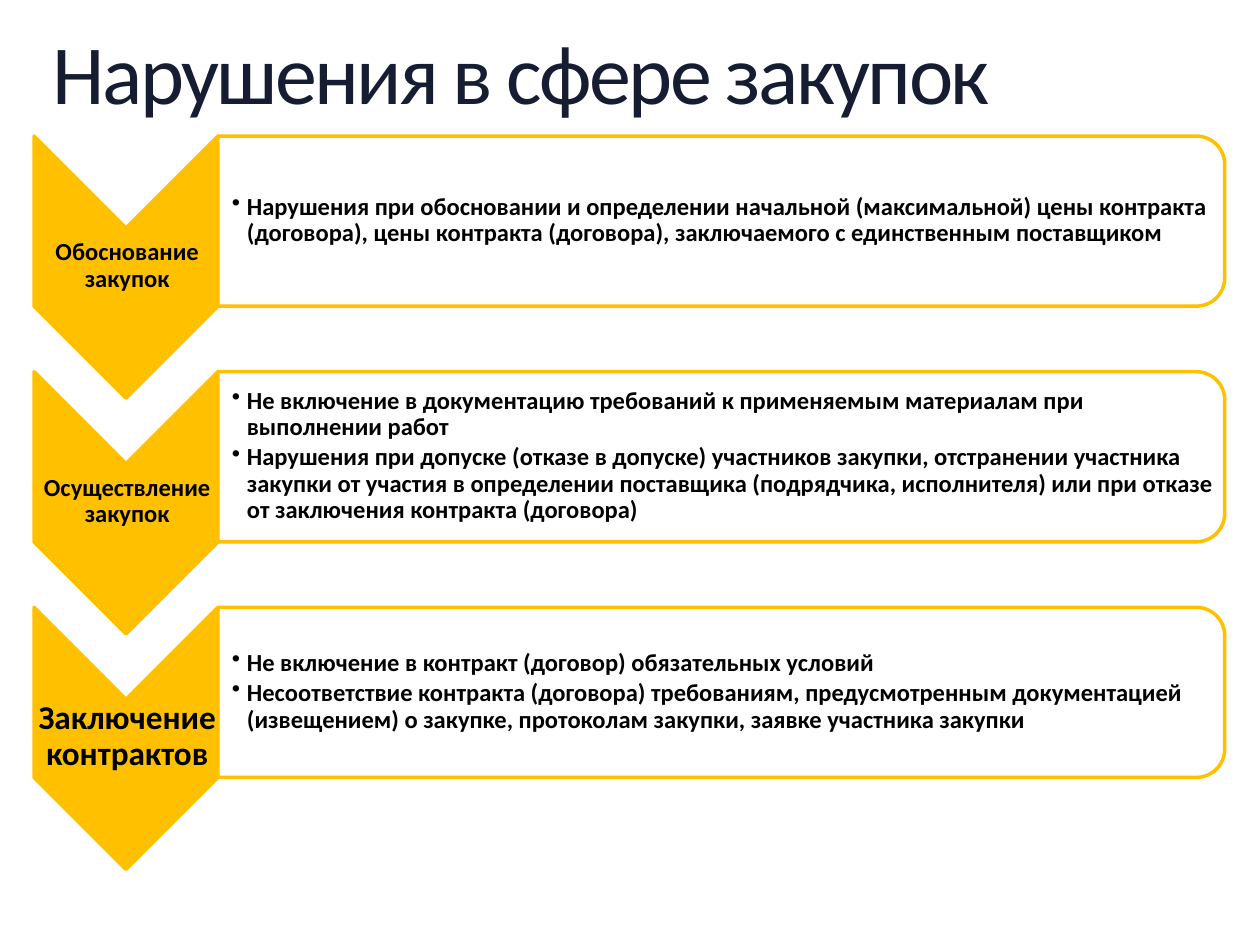
"""Build a slide listing procurement violations by stage."""
from dataclasses import dataclass

from lxml import etree
from pptx import Presentation
from pptx import util as u
from pptx.dml.color import RGBColor
from pptx.enum import shapes, text
from pptx.oxml.ns import qn

GOLD = RGBColor(0xFF, 0xC0, 0x00)
WHITE = RGBColor(0xFF, 0xFF, 0xFF)
BLACK = RGBColor(0x00, 0x00, 0x00)
NAVY = RGBColor(0x16, 0x1D, 0x32)
FIRST_TOP = 1.08
ROW_PITCH = 1.87
CHEVRON_LENGTH, CHEVRON_WIDTH = 2.08, 1.46
PANEL_LENGTH, PANEL_HEIGHT = 7.99, 1.35


@dataclass
class Stage:
    name: str
    violations: list[str]
    name_size: int = 14


STAGES = [
    Stage("Обоснование закупок", [
        "Нарушения при обосновании и определении начальной (максимальной) цены контракта "
        "(договора), цены контракта (договора), заключаемого с единственным поставщиком",
    ]),
    Stage("Осуществление закупок", [
        "Не включение в документацию требований к применяемым материалам при выполнении работ",
        "Нарушения при допуске (отказе в допуске) участников закупки, отстранении участника "
        "закупки от участия в определении поставщика (подрядчика, исполнителя) или при отказе "
        "от заключения контракта (договора)",
    ]),
    Stage("Заключение контрактов", [
        "Не включение в контракт (договор) обязательных условий",
        "Несоответствие контракта (договора) требованиям, предусмотренным документацией "
        "(извещением) о закупке, протоколам закупки, заявке участника закупки",
    ], name_size=19),
]


def write_text(shape, lines: list[str], *, size=14, color=BLACK, bold=True,
               align=text.PP_ALIGN.LEFT, anchor=text.MSO_ANCHOR.MIDDLE,
               inset=0.01, left_inset=0.01, bullet=False, tracking=0) -> None:
    frame = shape.text_frame
    frame.word_wrap = True
    frame.vertical_anchor = anchor
    frame.margin_left = u.Inches(left_inset)
    frame.margin_top = frame.margin_right = frame.margin_bottom = u.Inches(inset)
    for index, line in enumerate(lines):
        paragraph = frame.add_paragraph() if index else frame.paragraphs[0]
        paragraph.alignment = align
        paragraph.line_spacing = 0.9
        if bullet:
            add_bullet(paragraph)
        run = paragraph.add_run()
        run.text = line
        run.font.name = "Calibri"
        run.font.size = u.Pt(size)
        run.font.bold = bold
        run.font.color.rgb = color
        if tracking:
            run.font._element.set("spc", str(int(tracking * 100)))


def add_bullet(paragraph) -> None:
    paragraph.level = 1
    paragraph.space_after = u.Pt(2.1)
    properties = paragraph._p.get_or_add_pPr()
    properties.set("marL", str(u.Inches(0.12)))
    properties.set("indent", str(-u.Inches(0.12)))
    etree.SubElement(properties, qn("a:buChar")).set("char", "•")


def add_turned_shape(slide, kind, left: float, top: float, width: float, height: float,
                     fill: RGBColor):
    """Add a shape turned by 90 degrees that covers the given visible area."""
    shape = slide.shapes.add_shape(
        kind, u.Inches(left + (width - height) / 2), u.Inches(top + (height - width) / 2),
        u.Inches(height), u.Inches(width))
    shape.rotation = 90
    shape.shadow.inherit = False
    shape.fill.solid()
    shape.fill.fore_color.rgb = fill
    shape.line.color.rgb = GOLD
    shape.line.width = u.Pt(2)
    return shape


def add_textbox(slide, left: float, top: float, width: float, height: float):
    return slide.shapes.add_textbox(*map(u.Inches, (left, top, width, height)))


def add_stage(slide, stage: Stage, top: float) -> None:
    add_turned_shape(slide, shapes.MSO_SHAPE.CHEVRON, 0.27, top,
                     CHEVRON_WIDTH, CHEVRON_LENGTH, GOLD)
    label = add_textbox(slide, 0.28, top + 0.72, CHEVRON_WIDTH, 0.62)
    write_text(label, [stage.name], size=stage.name_size, align=text.PP_ALIGN.CENTER)
    panel = add_turned_shape(slide, shapes.MSO_SHAPE.ROUND_2_SAME_RECTANGLE, 1.73, top,
                             PANEL_LENGTH, PANEL_HEIGHT, WHITE)
    fill_color = panel._element.spPr.find(qn("a:solidFill"))[0]
    etree.SubElement(fill_color, qn("a:alpha")).set("val", "90000")
    details = add_textbox(slide, 1.73, top + 0.06, 7.93, 1.22)
    write_text(details, stage.violations, left_inset=0.11, bullet=True)


def main() -> None:
    presentation = Presentation()
    presentation.slide_width = u.Inches(10)
    presentation.slide_height = u.Inches(7.5)
    slide = presentation.slides.add_slide(presentation.slide_layouts[5])
    title = slide.shapes.title
    title.left, title.top = u.Inches(0.42), u.Inches(0.25)
    title.width, title.height = u.Inches(9.17), u.Inches(0.51)
    write_text(title, ["Нарушения в сфере закупок"], size=48, color=NAVY, bold=False,
               anchor=text.MSO_ANCHOR.TOP, inset=0, left_inset=0, tracking=-1.5)
    title.text_frame.auto_size = text.MSO_AUTO_SIZE.SHAPE_TO_FIT_TEXT
    for index, stage in enumerate(STAGES):
        add_stage(slide, stage, FIRST_TOP + index * ROW_PITCH)
    presentation.save("out.pptx")


if __name__ == "__main__":
    main()
